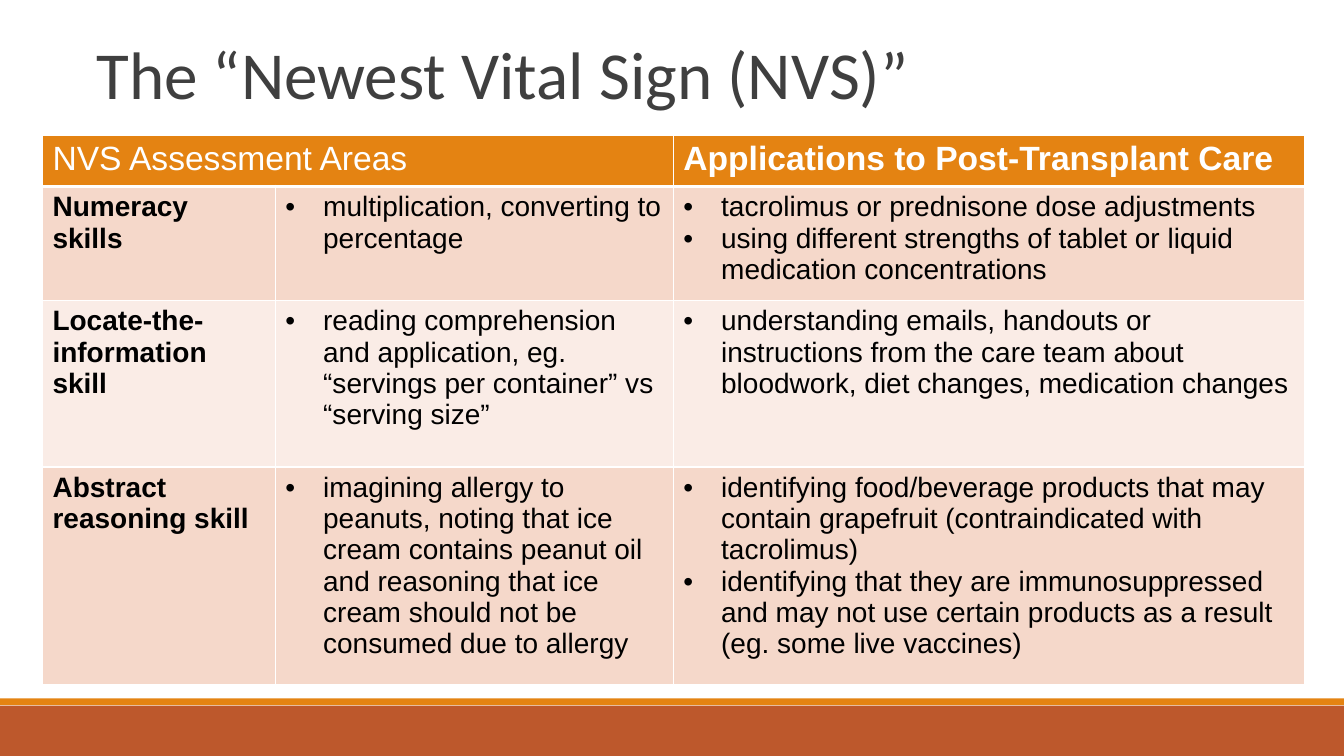
from dataclasses import dataclass

from lxml import etree
from pptx import Presentation
from pptx import util as u
from pptx.dml.color import RGBColor
from pptx.enum import shapes, text
from pptx.oxml.ns import qn


@dataclass(frozen=True)
class Theme:
    title_font: str = "Calibri"
    body_font: str = "Arial"
    title_size: int = 48
    header_size: int = 24
    body_size: int = 20
    title_color: str = "3F3F3F"
    body_color: str = "000000"
    white: str = "FFFFFF"
    orange: str = "E48312"
    rust: str = "BD582C"
    bands: tuple = ("F5D8CA", "FAECE6")


def paint(fill, color):
    fill.solid()
    fill.fore_color.rgb = RGBColor.from_string(color)


def add_bullet(para, indent=u.Cm(0.95)):
    properties = para._p.get_or_add_pPr()
    properties.set("marL", str(indent))
    properties.set("indent", str(-indent))
    etree.SubElement(properties, qn("a:buFont"), typeface="Arial")
    etree.SubElement(properties, qn("a:buChar"), char="•")


def write_text(frame, lines, *, font, size, color, bold=False, bullet=False, spacing=None):
    """Fill a text frame with one paragraph per line."""
    frame.word_wrap = True
    for index, line in enumerate(lines):
        para = frame.add_paragraph() if index else frame.paragraphs[0]
        para.alignment = text.PP_ALIGN.LEFT
        if spacing:
            para.line_spacing = spacing
        if bullet:
            add_bullet(para)
        span = para.add_run()
        span.text = line
        span.font.name = font
        span.font.size = u.Pt(size)
        span.font.bold = bold
        span.font.color.rgb = RGBColor.from_string(color)


def add_borders(cell, color, bottom):
    properties = cell._tc.get_or_add_tcPr()
    for side, width in (("L", 1), ("R", 1), ("T", 1), ("B", bottom)):
        line = etree.SubElement(properties, qn(f"a:ln{side}"), w=str(u.Pt(width)))
        solid = etree.SubElement(line, qn("a:solidFill"))
        etree.SubElement(solid, qn("a:srgbClr"), val=color)


class SlideBuilder:
    def __init__(self, slide, theme):
        self.slide = slide
        self.theme = theme

    def bar(self, top, height, color):
        bar = self.slide.shapes.add_shape(
            shapes.MSO_SHAPE.RECTANGLE, 0, u.Cm(top), u.Cm(33.87), u.Cm(height))
        bar.shadow.inherit = False
        paint(bar.fill, color)
        bar.line.fill.background()

    def title(self, words, left, top, width, height):
        box = self.slide.shapes.add_textbox(*map(u.Cm, (left, top, width, height)))
        box.text_frame.vertical_anchor = text.MSO_ANCHOR.BOTTOM
        write_text(box.text_frame, [words], font=self.theme.title_font,
                   size=self.theme.title_size, color=self.theme.title_color, spacing=0.85)

    def cell(self, cell, lines, fill, *, bottom=1, **style):
        add_borders(cell, self.theme.white, bottom)
        paint(cell.fill, fill)
        write_text(cell.text_frame, lines, font=self.theme.body_font, **style)

    def table(self, header, skills, left, top, widths, heights):
        theme = self.theme
        table = self.slide.shapes.add_table(
            len(heights), len(widths), u.Cm(left), u.Cm(top),
            u.Cm(sum(widths)), u.Cm(sum(heights))).table
        for column, width in zip(table.columns, widths):
            column.width = u.Cm(width)
        for row, height in zip(table.rows, heights):
            row.height = u.Cm(height)

        # Header row, with the first heading across two columns
        for index, heading in enumerate(header):
            self.cell(table.cell(0, index), [heading] if heading else [], theme.orange,
                      bottom=3, size=theme.header_size, color=theme.white, bold=index == 2)
        table.cell(0, 0).merge(table.cell(0, 1))

        # Skill rows in alternating bands
        for row, (skill, *lists) in enumerate(skills, start=1):
            for column, lines in enumerate([[skill], *lists]):
                self.cell(table.cell(row, column), lines,
                          theme.bands[(row - 1) % len(theme.bands)],
                          size=theme.body_size, color=theme.body_color,
                          bold=column == 0, bullet=column > 0)


HEADER = ("NVS Assessment Areas", None, "Applications to Post-Transplant Care")
SKILLS = [
    ("Numeracy skills",
     ["multiplication, converting to percentage"],
     ["tacrolimus or prednisone dose adjustments",
      "using different strengths of tablet or liquid medication concentrations"]),
    ("Locate-the-information skill",
     ["reading comprehension and application, eg. “servings per container” vs “serving size”"],
     ["understanding emails, handouts or instructions from the care team about "
      "bloodwork, diet changes, medication changes"]),
    ("Abstract reasoning skill",
     ["imagining allergy to peanuts, noting that ice cream contains peanut oil and "
      "reasoning that ice cream should not be consumed due to allergy"],
     ["identifying food/beverage products that may contain grapefruit "
      "(contraindicated with tacrolimus)",
      "identifying that they are immunosuppressed and may not use certain products "
      "as a result (eg. some live vaccines)"]),
]


def main():
    deck = Presentation()
    deck.slide_width, deck.slide_height = u.Cm(33.87), u.Cm(19.05)
    theme = Theme()
    page = SlideBuilder(deck.slides.add_slide(deck.slide_layouts[6]), theme)

    # Footer bars
    page.bar(17.78, 1.27, theme.rust)
    page.bar(17.6, 0.17, theme.orange)

    # Title and assessment table
    page.title("The “Newest Vital Sign (NVS)”", 2.18, 0.38, 27.94, 2.59)
    page.table(HEADER, SKILLS, 1.07, 3.4,
               widths=(5.87, 10.03, 15.9), heights=(1.3, 2.87, 4.2, 5.49))

    deck.save("out.pptx")


if __name__ == "__main__":
    main()
